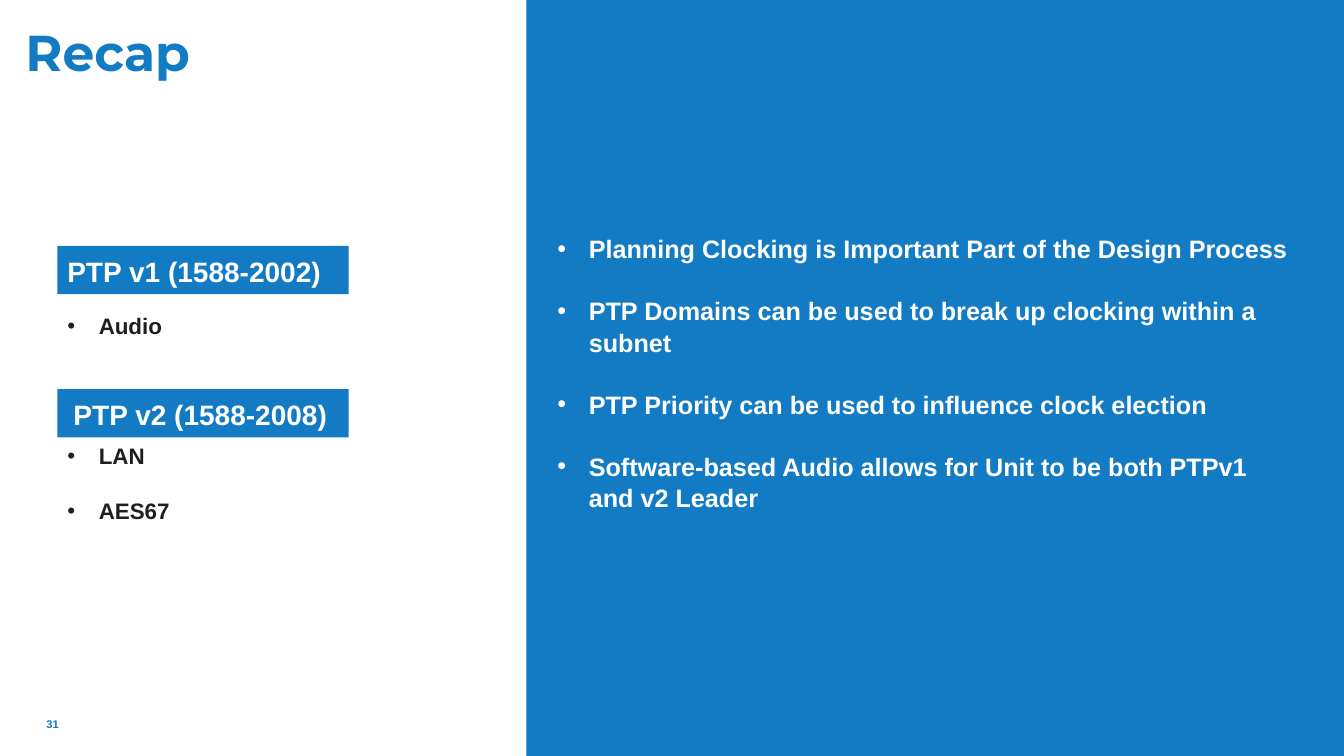
from lxml.etree import SubElement
from pptx import Presentation
from pptx.dml.color import RGBColor
from pptx.enum.shapes import MSO_SHAPE as Shape
from pptx.enum.text import MSO_ANCHOR as Anchor, PP_ALIGN as Align
from pptx.oxml.ns import qn
from pptx.util import Pt

BLUE, WHITE, DARK = "127BC3", "FFFFFF", "1F1F21"
WIDE, HIGH = 960, 540
INDENT = 22.5


def color(code):
    return RGBColor.from_string(code)


def style(para, size, code, face="Arial", line=None):
    para.alignment = Align.LEFT
    para.line_spacing = line
    for run in para.runs:
        font = run.font
        font.name, font.size, font.bold = face, Pt(size), True
        font.color.rgb = color(code)


def bullet(para):
    props = para._p.get_or_add_pPr()
    props.set("marL", str(Pt(INDENT)))
    props.set("indent", str(-Pt(INDENT)))
    SubElement(props, qn("a:buFont"), typeface="Arial")
    SubElement(props, qn("a:buChar"), char="•")


def block(slide, left, top, width, height):
    """Draw a plain blue rectangle."""
    rect = slide.shapes.add_shape(
        Shape.RECTANGLE, Pt(left), Pt(top), Pt(width), Pt(height))
    rect.shadow.inherit = False
    rect.fill.solid()
    rect.fill.fore_color.rgb = color(BLUE)
    rect.line.fill.background()
    return rect


def label(slide, text, left, top, width, height, size, code):
    frame = slide.shapes.add_textbox(
        Pt(left), Pt(top), Pt(width), Pt(height)).text_frame
    frame.word_wrap = True
    frame.text = text
    for para in frame.paragraphs:
        style(para, size, code)
    return frame


def listing(slide, items, left, top, width, height, size, code, line, gap):
    """Write a bulleted list with a gap between its items."""
    frame = label(slide, "\n".join(items), left, top, width, height, size, code)
    for i, para in enumerate(frame.paragraphs):
        bullet(para)
        para.line_spacing = line
        if i:
            para.space_before = Pt(gap)


def header(slide, text, left, top, width, height):
    title = slide.shapes.title
    title.left, title.top = Pt(left), Pt(top)
    title.width, title.height = Pt(width), Pt(height)
    frame = title.text_frame
    frame.text = text
    frame.vertical_anchor = Anchor.TOP
    style(frame.paragraphs[0], 36, BLUE, "Montserrat", 0.9)


def version(slide, name, items, left, top, width, inset, drop, line):
    """Draw a heading bar with its list, placed drop below the bar's top."""
    frame = block(slide, left, top, width, 34.5).text_frame
    frame.text = name
    frame.word_wrap = True
    frame.margin_left, frame.margin_right = Pt(inset), Pt(0)
    frame.vertical_anchor = Anchor.TOP
    style(frame.paragraphs[0], 20, WHITE, line=1.1)
    listing(slide, items, left, top + drop, width, 80.5, 16, DARK, line, 20)


def panel(slide, items, left, top, width, height):
    block(slide, left, top, width, height)
    listing(slide, items, left + 15, top + 162, 540, 204, 18, WHITE, 1.05, 21.6)


def recap(slide):
    header(slide, "Recap", 11, 16.5, 782, 86.5)
    version(slide, "PTP v1 (1588-2002)", ["Audio"],
            41, 175.7, 208, 7.2, 38.2, 1.3)
    version(slide, "PTP v2 (1588-2008)", ["LAN", "AES67"],
            41, 277.9, 208, 11.5, 34.6, 1.0)
    panel(slide, [
        "Planning Clocking is Important Part of the Design Process",
        "PTP Domains can be used to break up clocking within a subnet",
        "PTP Priority can be used to influence clock election",
        "Software-based Audio allows for Unit to be both PTPv1 and v2 Leader",
    ], 376, 0, WIDE - 376, HIGH)
    page = label(slide, "31", 26, 508, 34, 18, 8, BLUE)
    page.vertical_anchor = Anchor.MIDDLE


def main():
    deck = Presentation()
    deck.slide_width, deck.slide_height = Pt(WIDE), Pt(HIGH)
    recap(deck.slides.add_slide(deck.slide_layouts[5]))
    deck.save("out.pptx")


if __name__ == "__main__":
    main()
